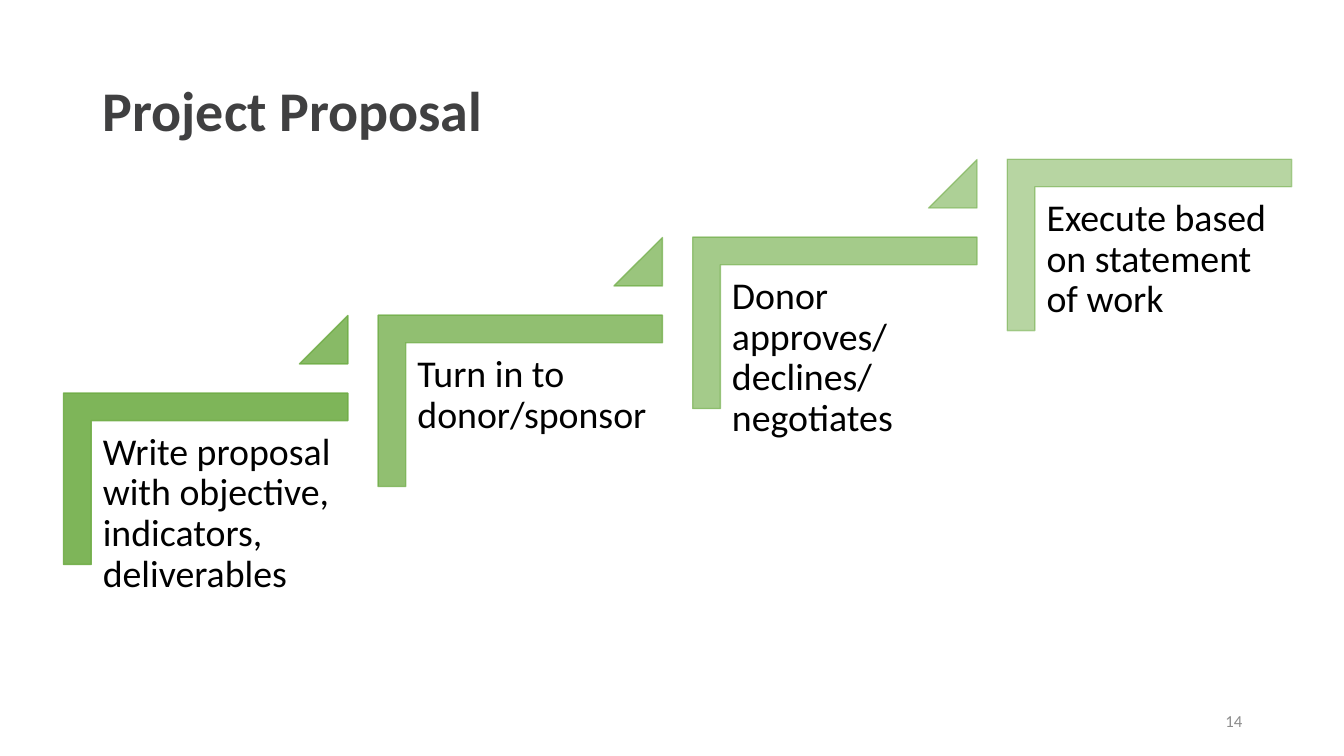
from pptx import Presentation
from pptx.dml.color import RGBColor
from pptx.enum.shapes import MSO_SHAPE
from pptx.enum.text import MSO_ANCHOR, PP_ALIGN
from pptx.oxml.ns import qn
from pptx.util import Inches, Pt
from lxml import etree

COLORS = {"title": "404041", "body": "000000", "step": "70AD47", "page": "8C8C8C"}
STEPS = [
    "Write proposal with objective, indicators, deliverables",
    "Turn in to donor/sponsor",
    "Donor approves/ declines/ negotiates",
    "Execute based on statement of work",
]
RUN = 3.12       # distance between steps
RISE = 2.32 / 3  # height of one step
FADE = 40 / 6    # opacity lost from one shape to the next


def add_text(slide, text, box, size, color, bold=False, align=PP_ALIGN.LEFT,
             anchor=MSO_ANCHOR.TOP, spacing=1.0, inset=None):
    frame = slide.shapes.add_textbox(*map(Inches, box)).text_frame
    frame.word_wrap = True
    frame.vertical_anchor = anchor
    if inset is not None:
        frame.margin_left = frame.margin_right = Inches(inset)
        frame.margin_top = frame.margin_bottom = Inches(inset)
    para = frame.paragraphs[0]
    para.alignment = align
    para.line_spacing = spacing
    run = para.add_run()
    run.text = text
    run.font.name = "Calibri"
    run.font.size = Pt(size)
    run.font.bold = bold
    run.font.color.rgb = RGBColor.from_string(COLORS[color])


def add_mark(slide, kind, box, ratios, opacity, turn=0):
    mark = slide.shapes.add_shape(kind, *map(Inches, box))
    mark.shadow.inherit = False
    mark.rotation = turn
    for i, ratio in enumerate(ratios):
        mark.adjustments[i] = ratio
    color = RGBColor.from_string(COLORS["step"])
    mark.fill.solid()
    mark.fill.fore_color.rgb = color
    mark.line.color.rgb = color
    mark.line.width = Pt(1)
    # Same transparency for fill and line
    for node in mark._element.spPr.iter(qn("a:srgbClr")):
        alpha = etree.SubElement(node, qn("a:alpha"))
        alpha.set("val", str(round(opacity) * 1000))


def add_step(slide, i, text):
    left, drop = RUN * i, RISE * i
    shade = 90 - 2 * FADE * i
    add_mark(slide, MSO_SHAPE.CORNER, (1.19 + left, 3.34 - drop, 1.7, 2.82),
             (0.161, 0.161), shade, turn=90)
    add_text(slide, text, (0.91 + left, 4.18 - drop, 2.55, 2.23), 27, "body",
             spacing=0.9, inset=0.11)
    # Triangle that leads up to the next step
    if i < len(STEPS) - 1:
        add_mark(slide, MSO_SHAPE.ISOSCELES_TRIANGLE,
                 (2.97 + left, 3.13 - drop, 0.48, 0.48), (1,), shade - FADE)


def main():
    deck = Presentation()
    deck.slide_width, deck.slide_height = Inches(13.33), Inches(7.5)
    slide = deck.slides.add_slide(deck.slide_layouts[6])

    # Title
    add_text(slide, "Project Proposal", (0.92, 0.4, 11.5, 1.45), 40, "title",
             bold=True, anchor=MSO_ANCHOR.MIDDLE, spacing=0.9)
    # Staircase
    for i, text in enumerate(STEPS):
        add_step(slide, i, text)
    # Page number
    add_text(slide, "14", (9.42, 6.95, 3, 0.4), 12, "page",
             align=PP_ALIGN.RIGHT, anchor=MSO_ANCHOR.MIDDLE)
    deck.save("out.pptx")


if __name__ == "__main__":
    main()
